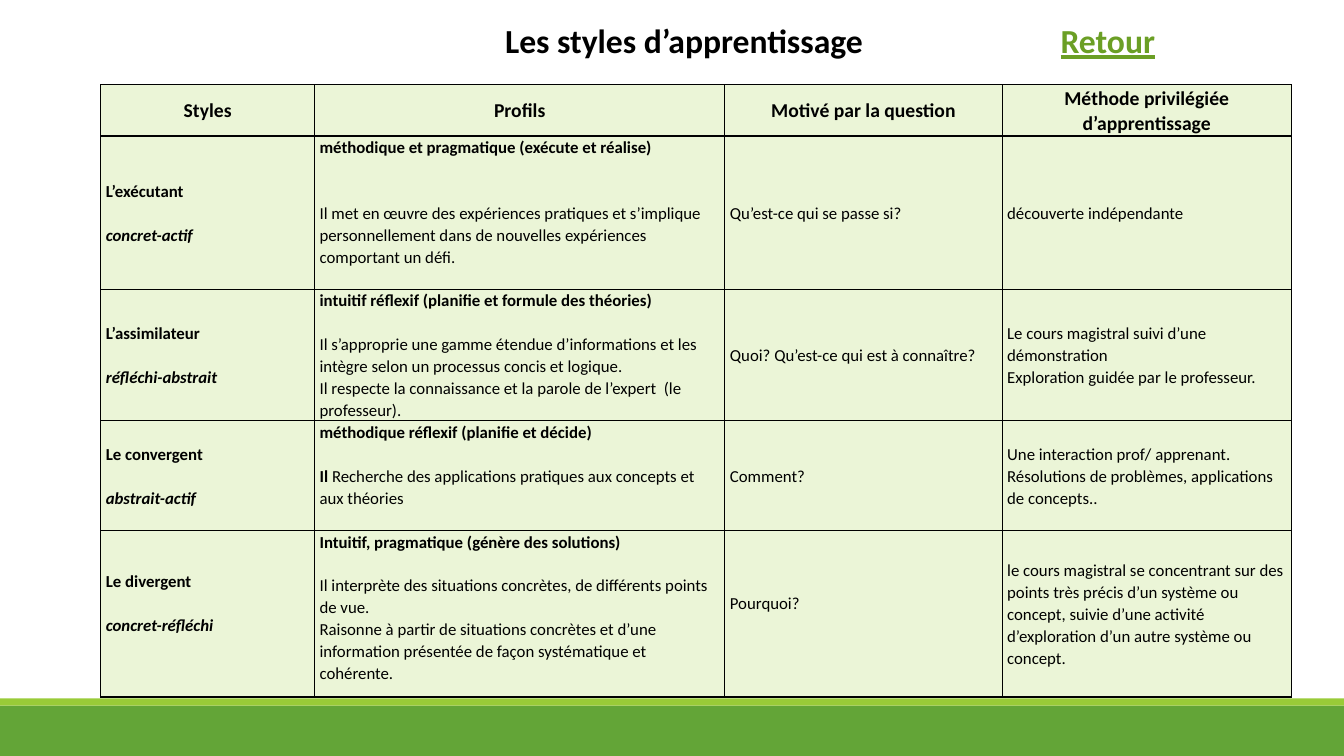
from lxml import etree
from pptx import Presentation
from pptx.dml.color import RGBColor
from pptx.enum.shapes import MSO_SHAPE
from pptx.enum.text import MSO_ANCHOR, MSO_AUTO_SIZE, PP_ALIGN
from pptx.oxml.ns import qn
from pptx.util import Inches, Pt

RECTANGLE = MSO_SHAPE.RECTANGLE
TOP, MIDDLE = MSO_ANCHOR.TOP, MSO_ANCHOR.MIDDLE
LEFT, CENTER = PP_ALIGN.LEFT, PP_ALIGN.CENTER
NO_AUTOFIT = MSO_AUTO_SIZE.NONE

BLACK = RGBColor(0x00, 0x00, 0x00)
DARK_GREEN = RGBColor(0x63, 0xA5, 0x37)
LIGHT_GREEN = RGBColor(0x99, 0xCB, 0x38)
LINK_GREEN = RGBColor(0x6B, 0x9F, 0x25)
CELL_GREEN = RGBColor(0xEB, 0xF5, 0xD7)

FONT = "Calibri"
LINE_SPACING = 1.07
BLANK_LINE = 15.7  # height of one 12 pt line, in points

COLUMN_WIDTHS = [2.12, 4.07, 2.75, 2.87]
ROW_HEIGHTS = [0.51, 1.52, 1.3, 1.09, 1.65]
HEADERS = ["Styles", "Profils", "Motivé par la question",
           "Méthode privilégiée d’apprentissage"]

# Style, type, profile heading, profile lines, question, methods
STYLES = [
    ("L’exécutant", "concret-actif",
     "méthodique et pragmatique (exécute et réalise)",
     ["Il met en œuvre des expériences pratiques et s’implique personnellement "
      "dans de nouvelles expériences comportant un défi."],
     "Qu’est-ce qui se passe si?", ["découverte indépendante"]),
    ("L’assimilateur", "réfléchi-abstrait",
     "intuitif réflexif (planifie et formule des théories)",
     ["Il s’approprie une gamme étendue d’informations et les intègre selon "
      "un processus concis et logique.",
      "Il respecte la connaissance et la parole de l’expert  (le professeur)."],
     "Quoi? Qu’est-ce qui est à connaître?",
     ["Le cours magistral suivi d’une démonstration",
      "Exploration guidée par le professeur."]),
    ("Le convergent", "abstrait-actif",
     "méthodique réflexif (planifie et décide)",
     ["Il Recherche des applications pratiques aux concepts et aux théories"],
     "Comment?",
     ["Une interaction prof/ apprenant.",
      "Résolutions de problèmes, applications de concepts.."]),
    ("Le divergent", "concret-réfléchi",
     "Intuitif, pragmatique (génère des solutions)",
     ["Il interprète des situations concrètes, de différents points de vue.",
      "Raisonne à partir de situations concrètes et d’une information présentée "
      "de façon systématique et cohérente."],
     "Pourquoi?",
     ["le cours magistral se concentrant sur des points très précis d’un système "
      "ou concept, suivie d’une activité d’exploration d’un autre système ou "
      "concept."]),
]


def format_run(run, size, color=BLACK, bold=False, italic=False):
    font = run.font
    font.name, font.size, font.bold, font.italic = FONT, Pt(size), bold, italic
    font.color.rgb = color


def add_band(slide, top, height, color):
    band = slide.shapes.add_shape(RECTANGLE, 0, Inches(top), Inches(13.33), Inches(height))
    band.shadow.inherit = False
    band.fill.solid()
    band.fill.fore_color.rgb = color
    band.line.fill.background()


def set_heading(shape, text, left, width, alignment, color):
    shape.left, shape.top = Inches(left), Inches(0.15)
    shape.width, shape.height = Inches(width), Inches(0.5)
    frame = shape.text_frame
    frame.text = text
    frame.word_wrap = True
    frame.auto_size = NO_AUTOFIT
    frame.vertical_anchor = MIDDLE
    paragraph = frame.paragraphs[0]
    paragraph.alignment = alignment
    paragraph.line_spacing = 1.0
    format_run(paragraph.runs[0], 24, color, bold=True)


def set_borders(cell):
    properties = cell._tc.get_or_add_tcPr()
    for position, side in enumerate(("lnL", "lnR", "lnT", "lnB")):
        line = etree.Element(qn(f"a:{side}"), w=str(Pt(1)))
        fill = etree.SubElement(line, qn("a:solidFill"))
        etree.SubElement(fill, qn("a:srgbClr"), val=str(BLACK))
        properties.insert(position, line)


def fill_cell(cell, lines, size=12, alignment=LEFT, anchor=MIDDLE, gap=0,
              bold_lines=(), italic_lines=()):
    cell.fill.solid()
    cell.fill.fore_color.rgb = CELL_GREEN
    set_borders(cell)
    cell.margin_left = cell.margin_right = Inches(0.05)
    cell.margin_top = cell.margin_bottom = 0
    cell.vertical_anchor = anchor
    cell.text_frame.text = "\n".join(lines)
    for index, paragraph in enumerate(cell.text_frame.paragraphs):
        paragraph.alignment = alignment
        paragraph.line_spacing = LINE_SPACING
        if index == 1:
            paragraph.space_before = Pt(gap * BLANK_LINE)
        for run in paragraph.runs:
            format_run(run, size, bold=index in bold_lines, italic=index in italic_lines)


def embolden_start(paragraph, start):
    rest = paragraph.text[len(start):]
    paragraph.runs[0].text = start
    paragraph.runs[0].font.bold = True
    run = paragraph.add_run()
    run.text = rest
    format_run(run, 12)


def add_styles_table(slide):
    frame = slide.shapes.add_table(
        len(ROW_HEIGHTS), len(COLUMN_WIDTHS), Inches(1), Inches(0.84),
        Inches(sum(COLUMN_WIDTHS)), Inches(sum(ROW_HEIGHTS)))
    table = frame.table
    for column, width in zip(table.columns, COLUMN_WIDTHS):
        column.width = Inches(width)
    for row, height in zip(table.rows, ROW_HEIGHTS):
        row.height = Inches(height)

    for column, header in enumerate(HEADERS):
        fill_cell(table.cell(0, column), [header], 14, CENTER, bold_lines=(0,))
    for row, (style, kind, heading, profile, question, methods) in enumerate(STYLES, 1):
        fill_cell(table.cell(row, 0), [style, kind], gap=1,
                  bold_lines=(0, 1), italic_lines=(1,))
        fill_cell(table.cell(row, 1), [heading, *profile], anchor=TOP,
                  gap=2 if row == 1 else 1, bold_lines=(0,))
        fill_cell(table.cell(row, 2), [question])
        fill_cell(table.cell(row, 3), methods)

    # The convergent profile opens in bold; the last row sits slightly higher
    embolden_start(table.cell(3, 1).text_frame.paragraphs[1], "Il ")
    for column in (0, 2):
        table.cell(4, column).margin_bottom = Inches(0.22)


def main():
    presentation = Presentation()
    presentation.slide_width, presentation.slide_height = Inches(13.33), Inches(7.5)
    slide = presentation.slides.add_slide(presentation.slide_layouts[5])

    # Bottom bands
    add_band(slide, 7, 0.5, DARK_GREEN)
    add_band(slide, 6.93, 0.07, LIGHT_GREEN)

    add_styles_table(slide)

    # Title and return label
    set_heading(slide.shapes.title, "Les styles d’apprentissage", 3.46, 6.65, CENTER, BLACK)
    label = slide.shapes.add_textbox(0, 0, 0, 0)
    set_heading(label, "Retour", 10.42, 2.51, LEFT, LINK_GREEN)
    label.text_frame.paragraphs[0].runs[0].font.underline = True

    presentation.save("out.pptx")


if __name__ == "__main__":
    main()
